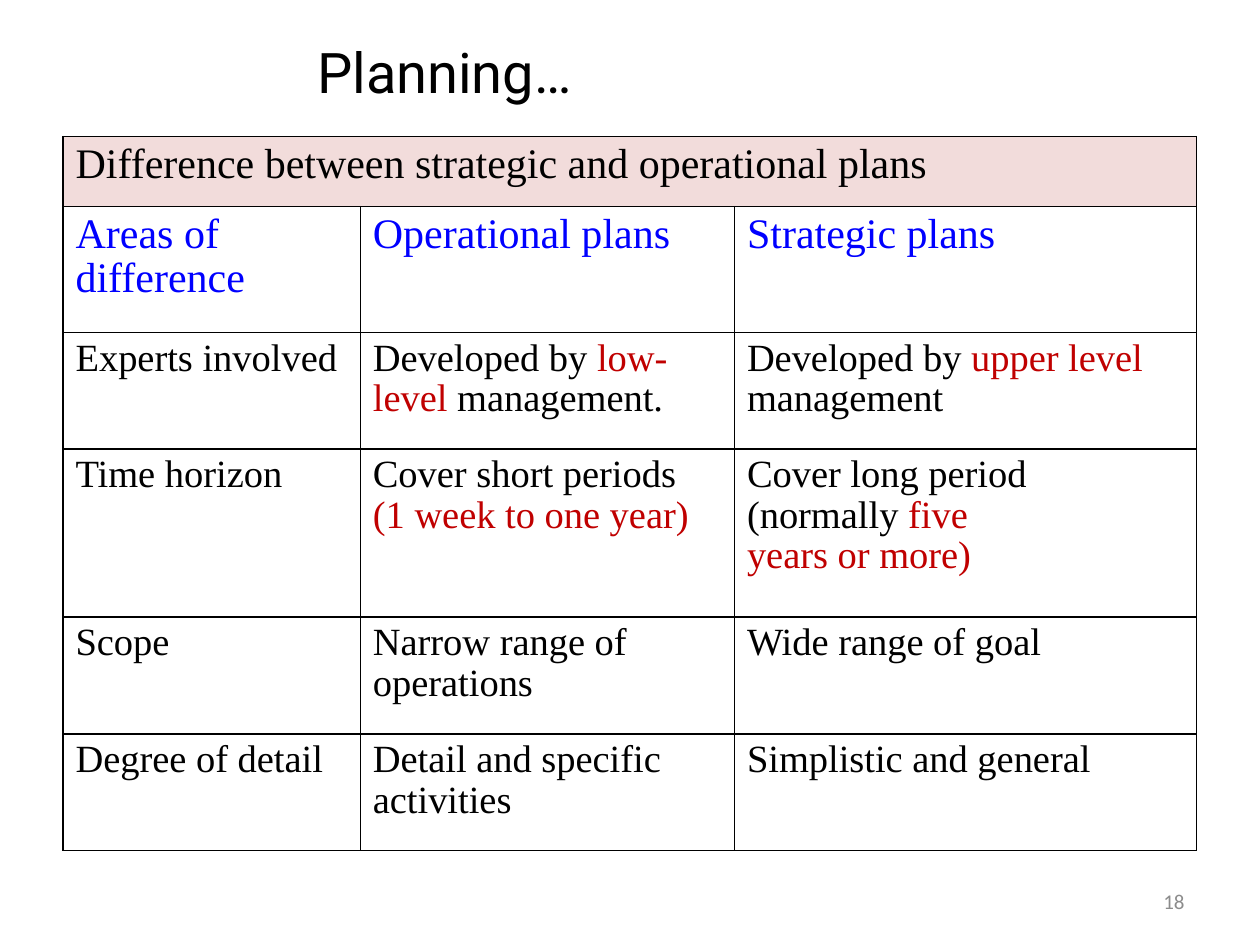
from lxml.etree import SubElement
from pptx import Presentation
from pptx.dml.color import RGBColor
from pptx.enum.text import MSO_ANCHOR, PP_ALIGN
from pptx.oxml.ns import qn
from pptx.util import Pt

BLACK, BLUE, RED = "000000", "0000FF", "C00000"
PINK, GREY = "F2DCDB", "8C8C8C"
COLS = [169.9, 213.8, 264]
ROWS = [40, 72, 66.7, 96, 66.7, 66.7]
HEAD = "Difference between strategic and operational plans"
# A bar switches between black and red text.
CELLS = [
    ["Areas of difference", "Operational plans", "Strategic plans"],
    ["Experts involved", "Developed by |low-level |management.",
     "Developed by |upper level\nmanagement"],
    ["Time horizon", "Cover short periods\n|(1 week to one year)",
     "Cover long period (normally |five\n|years or more)"],
    ["Scope", "Narrow range of operations", "Wide range of goal"],
    ["Degree of detail", "Detail and specific activities",
     "Simplistic and general"],
]


def rgb(code):
    return RGBColor.from_string(code)


class Deck:
    serif, title_font, num_font = "Times New Roman", "Roboto", "Calibri"

    def __init__(self):
        self.prs = Presentation()
        self.prs.slide_width, self.prs.slide_height = Pt(720), Pt(540)
        self.slide = self.prs.slides.add_slide(self.prs.slide_layouts[5])

    def text(self, frame, text, font, size, color, align=PP_ALIGN.LEFT):
        frame.word_wrap = True
        for i, line in enumerate(text.split("\n")):
            para = frame.add_paragraph() if i else frame.paragraphs[0]
            para.alignment = align
            para.font.name, para.font.size = font, Pt(size)
            para.font.color.rgb = rgb(color)
            for j, part in enumerate(line.split("|")):
                if part:
                    run = para.add_run()
                    run.text = part
                    if j % 2:
                        run.font.color.rgb = rgb(RED)

    def title(self, text, x, y, w, h):
        box = self.slide.shapes.title
        box.left, box.top, box.width, box.height = map(Pt, (x, y, w, h))
        box.text_frame.vertical_anchor = MSO_ANCHOR.TOP
        self.text(box.text_frame, text, self.title_font, 32, BLACK)

    def number(self, text, x, y, w, h):
        box = self.slide.shapes.add_textbox(*map(Pt, (x, y, w, h)))
        box.text_frame.vertical_anchor = MSO_ANCHOR.MIDDLE
        self.text(box.text_frame, text, self.num_font, 12, GREY,
                  PP_ALIGN.RIGHT)

    def border(self, cell):
        props = cell._tc.get_or_add_tcPr()
        for side in ("lnL", "lnR", "lnT", "lnB"):
            line = SubElement(props, qn(f"a:{side}"), w=str(Pt(1)))
            fill = SubElement(line, qn("a:solidFill"))
            SubElement(fill, qn("a:srgbClr"), val=BLACK)

    def cell(self, cell, text, size, color):
        self.text(cell.text_frame, text, self.serif, size, color)
        for para in cell.text_frame.paragraphs:
            para.line_spacing = 0.95

    def table(self, x, y):
        frame = self.slide.shapes.add_table(
            len(ROWS), len(COLS), Pt(x), Pt(y), Pt(sum(COLS)), Pt(sum(ROWS)))
        table = frame.table
        table.first_row = table.horz_banding = False
        for col, width in zip(table.columns, COLS):
            col.width = Pt(width)
        for row, height in zip(table.rows, ROWS):
            row.height = Pt(height)
        for cell in table.iter_cells():
            self.border(cell)
            cell.fill.background()
        head = table.cell(0, 0)
        head.merge(table.cell(0, len(COLS) - 1))
        head.fill.solid()
        head.fill.fore_color.rgb = rgb(PINK)
        self.cell(head, HEAD, 24, BLACK)
        for r, row in enumerate(CELLS, 1):
            size, color = (24, BLUE) if r == 1 else (22, BLACK)
            for c, text in enumerate(row):
                self.cell(table.cell(r, c), text, size, color)


def main():
    deck = Deck()
    deck.title("Planning…", 174, 18, 235, 46)
    deck.table(36, 78)
    deck.number("18", 516, 500.5, 168, 28.75)
    deck.prs.save("out.pptx")


if __name__ == "__main__":
    main()
